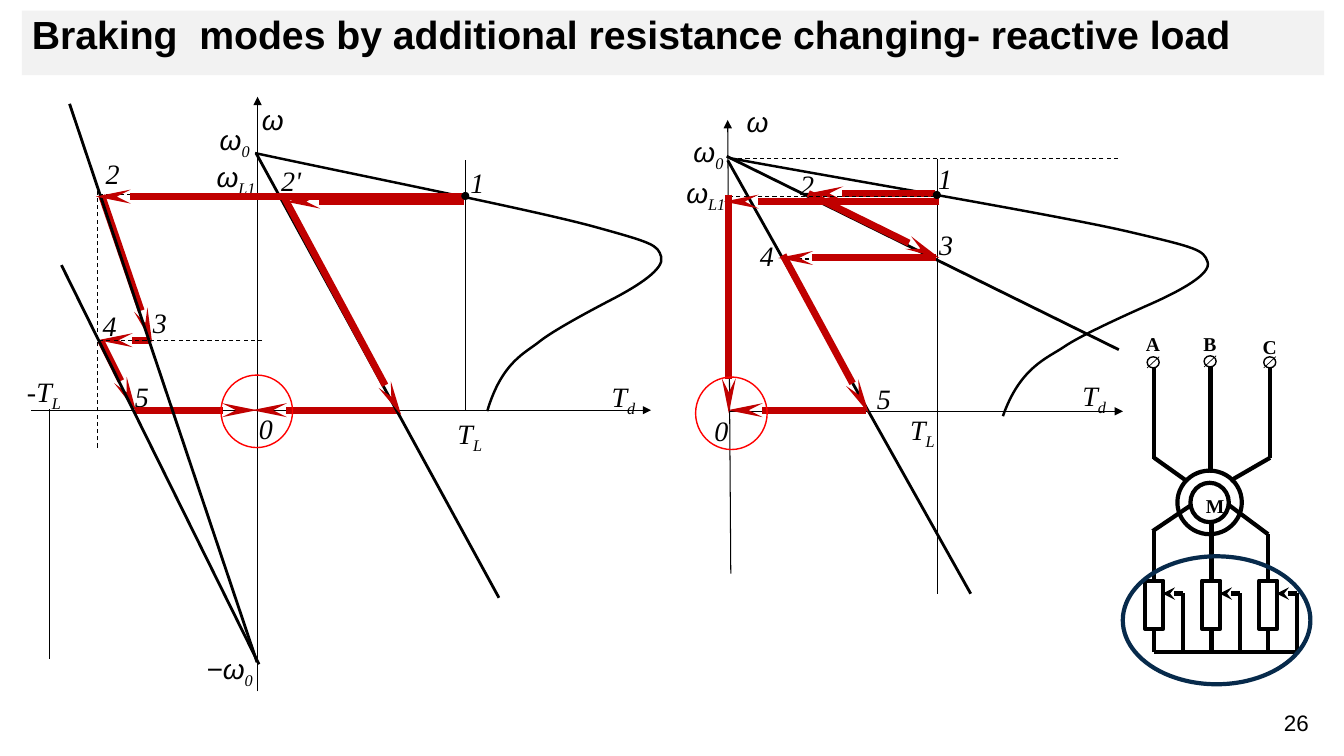
from lxml import etree
from pptx import Presentation
from pptx.dml.color import RGBColor
from pptx.enum.dml import MSO_LINE
from pptx.enum.shapes import MSO_CONNECTOR, MSO_SHAPE
from pptx.enum.text import MSO_ANCHOR, MSO_AUTO_SIZE, PP_ALIGN
from pptx.oxml.ns import qn
from pptx.util import Pt

STRAIGHT = MSO_CONNECTOR.STRAIGHT
RECTANGLE, OVAL = MSO_SHAPE.RECTANGLE, MSO_SHAPE.OVAL
DASH = MSO_LINE.DASH
TOP, NO_FIT = MSO_ANCHOR.TOP, MSO_AUTO_SIZE.NONE
LEFT, CENTER = PP_ALIGN.LEFT, PP_ALIGN.CENTER

BLACK = RGBColor(0x00, 0x00, 0x00)
WHITE = RGBColor(0xFF, 0xFF, 0xFF)
GRAY = RGBColor(0xF2, 0xF2, 0xF2)
DARK_RED = RGBColor(0xC0, 0x00, 0x00)
RED = RGBColor(0xFF, 0x00, 0x00)
NAVY = RGBColor(0x07, 0x2A, 0x4B)
SANS, SERIF = "Arial", "Times New Roman"

TITLE = "Braking  modes by additional resistance changing- reactive load"
PAGE = "26"

STYLES = {
    "axis": (BLACK, 0.75, None, {"type": "triangle"}),
    "load": (BLACK, 0.75, None, None),
    "guide": (BLACK, 0.75, DASH, None),
    "speed": (BLACK, 2, None, None),
    "braking": (DARK_RED, 5, None, {"type": "stealth", "w": "sm", "len": "lg"}),
    "wire": (BLACK, 3, None, None),
    "wiper": (BLACK, 3, None, {"type": "stealth"}),
    "slash": (BLACK, 0.5, None, None),
}

NATURAL_CURVE = [
    (0, 0), (95, 17.3), (235.4, 41), (285.1, 52.6), (334.1, 64.1), (338.4, 65.5),
    (341.3, 74.2), (344.2, 82.8), (321.1, 95), (301.7, 103.7), (282.2, 112.3),
    (250.6, 126.7), (239, 134.6), (227.5, 142.6), (207.4, 149), (195.1, 184.3),
]

REACTIVE_GRAPH = {
    "curve": (521.3, 113, 1),
    "labels": [
        ("T", "d", 766, 262.8, 40), ("4", "", 535.7, 163.4, 40), ("3", "", 663.8, 155.5, 40),
        ("2", "", 564.5, 112.3, 40), ("1", "", 663.1, 108, 28), ("ω", "L1", 483.1, 118, 54),
        ("T", "L", 643, 287.3, 33), ("ω", "", 526.3, 67.7, 54), ("ω", "0", 488.2, 88.6, 54),
        ("0", "", 503.3, 288, 28), ("5", "", 619.2, 265.7, 40),
    ],
    "lines": [
        ("axis", [(522, 409.7, 519.8, 85.7), (520.6, 293.8, 802.1, 293.8)]),
        ("load", [(669.6, 113.8, 669.6, 424.1)]),
        ("guide", [(798.5, 113, 522, 113), (559.4, 185, 666.7, 185)]),
        ("speed", [(519.1, 111.6, 799.2, 249.8)]),
        ("braking", [(618.5, 293, 519.8, 293), (668.9, 184.3, 555.8, 184.3),
                     (577.4, 138.2, 671, 184.3), (668.2, 138.2, 577.4, 138.2)]),
        ("guide", [(668.2, 140.4, 520.6, 140.4)]),
        ("speed", [(519.8, 114.5, 693.4, 424.1)]),
        ("braking", [(520.6, 139, 520.6, 295.2), (559.4, 182.2, 620.6, 295.2),
                     (671, 144, 517, 144)]),
    ],
    "operating_point": (669.2, 139.3),
    "standstill": (522.4, 295.2),
}

REVERSING_GRAPH = {
    "curve": (182.2, 109.4, 0.85),
    "labels": [
        ("T", "d", 429.8, 263.5, 40), ("4", "", 66.2, 213.1, 40), ("3", "", 102.2, 211, 40),
        ("2", "", 68.4, 104.4, 40), ("1", "", 329, 110.9, 28), ("ω", "L1", 147.6, 106.6, 54),
        ("T", "L", 319.7, 290.2, 33), ("ω", "", 180, 66.2, 54), ("ω", "0", 149.8, 79.9, 54),
        ("0", "", 177.8, 286.6, 28), ("5", "", 89.3, 264.2, 40), ("−ω", "0", 140.4, 457.9, 54),
        ("2'", "", 193.7, 109.4, 40), ("-T", "L", 12.2, 259.9, 43),
    ],
    "lines": [
        ("axis", [(184, 493.9, 184, 69.1), (22.3, 293, 465.1, 293)]),
        ("load", [(332.6, 114.5, 332.6, 293), (35.3, 292.3, 35.3, 470.9)]),
        ("braking", [(284.4, 293, 180, 293), (72, 243.4, 97.2, 293.8),
                     (106.6, 243, 69.8, 243), (72.7, 139.7, 108.7, 244.8),
                     (96.5, 293, 183.6, 293)]),
        ("guide", [(331.2, 139, 70.6, 139), (69.8, 319.7, 69.8, 135.4),
                   (187.2, 243, 69.8, 243)]),
        ("speed", [(43.9, 189.4, 185, 474.5), (49.7, 74.2, 183.6, 473),
                   (182.9, 109.4, 356.4, 427)]),
        ("braking", [(203, 141.1, 286.6, 296.6), (331.2, 144, 203.8, 144),
                     (331.2, 140.4, 68.4, 140.4)]),
    ],
    "operating_point": (332.4, 140),
    "standstill": (183.4, 293.8),
}

TERMINALS = [("A", 823.7, 258.8, 233.3), ("B", 864.4, 258.1, 233.3), ("C", 907, 258.8, 235.4)]
WIRES = [
    (824.4, 262, 824.4, 327.6), (824.4, 327, 847.4, 343.4),
    (864.7, 261.4, 864.7, 336.2),
    (907.2, 262, 907.2, 327), (907.2, 327, 878.8, 343.4),
    (851, 360.7, 823.3, 379.4), (824.4, 379.4, 824.4, 466),
    (865.4, 373, 865.4, 466),
    (877.7, 360.7, 905.8, 381.6), (905.8, 381.6, 905.8, 466),
    (927.4, 466, 824.4, 466),
]
RHEOSTATS = [824.4, 865.1, 905.8]

deck = Presentation()
deck.slide_width, deck.slide_height = Pt(960), Pt(540)
slide = deck.slides.add_slide(deck.slide_layouts[5])
shapes = slide.shapes


def add_line(style, x1, y1, x2, y2):
    color, width, dash, arrow = STYLES[style]
    line = shapes.add_connector(STRAIGHT, Pt(x1), Pt(y1), Pt(x2), Pt(y2))
    line.line.color.rgb = color
    line.line.width = Pt(width)
    if dash:
        line.line.dash_style = dash
    if arrow:
        etree.SubElement(line.line._get_or_add_ln(), qn("a:tailEnd"), arrow)
    etree.SubElement(line._element.spPr, qn("a:effectLst"))


def style_outline(shape, color, width, fill=None):
    shape.shadow.inherit = False
    shape.line.color.rgb = color
    shape.line.width = Pt(width)
    if fill is None:
        shape.fill.background()
    else:
        shape.fill.solid()
        shape.fill.fore_color.rgb = fill


def add_centered(kind, x, y, w, h, color, width, fill=None):
    shape = shapes.add_shape(kind, Pt(x - w / 2), Pt(y - h / 2), Pt(w), Pt(h))
    style_outline(shape, color, width, fill)
    return shape


def add_natural_curve(x0, y0, stretch):
    points = [(Pt(x0 + x * stretch), Pt(y0 + y)) for x, y in NATURAL_CURVE]
    builder = shapes.build_freeform(*points[0])
    builder.add_line_segments(points[1:], close=False)
    curve = builder.convert_to_shape()
    segments = list(curve._element.iter(qn("a:lnTo")))
    for i in range(0, len(segments), 3):
        bezier = etree.Element(qn("a:cubicBezTo"))
        segments[i].addprevious(bezier)
        for segment in segments[i:i + 3]:
            bezier.append(segment[0])
            segment.getparent().remove(segment)
    style_outline(curve, BLACK, 1.75)


def format_text(paragraph, size, font, bold=False, italic=False, align=LEFT):
    paragraph.alignment = align
    paragraph.font.size = Pt(size)
    paragraph.font.bold = bold
    paragraph.font.italic = italic
    paragraph.font.color.rgb = BLACK
    if font:
        paragraph.font.name = font


def add_text(text, x, y, w, h, wrap=True):
    frame = shapes.add_textbox(Pt(x), Pt(y), Pt(w), Pt(h)).text_frame
    frame.word_wrap = wrap
    frame.paragraphs[0].text = text
    return frame.paragraphs[0]


def add_symbol(symbol, subscript, x, y, w):
    label = add_text(symbol, x, y, w, 42)
    label.line_spacing = 1.15
    label.space_after = Pt(10)
    mixed = "ω" in symbol
    format_text(label, 20, None if mixed else SERIF, italic=True)
    if subscript:
        index = label.add_run()
        index.text = subscript
        index._r.get_or_add_rPr().set("baseline", "-25000")
    if mixed:
        for run, font in zip(label.runs, (SANS, SERIF)):
            run.font.name = font


def draw_graph(graph):
    add_natural_curve(*graph["curve"])
    for label in graph["labels"]:
        add_symbol(*label)
    for style, lines in graph["lines"]:
        for ends in lines:
            add_line(style, *ends)
    add_centered(OVAL, *graph["operating_point"], 5, 5, BLACK, 0.75, BLACK)
    add_centered(OVAL, *graph["standstill"], 51.1, 51.8, RED, 1)


def draw_motor():
    add_centered(OVAL, 864, 358.9, 46, 45.4, BLACK, 3)
    for ends in WIRES:
        add_line("wire", *ends)
    rotor = add_centered(OVAL, 864, 358.9, 27.4, 28.1, BLACK, 3).text_frame
    rotor.vertical_anchor = TOP
    rotor.paragraphs[0].text = "M"
    format_text(rotor.paragraphs[0], 14, SERIF, bold=True, align=CENTER)
    for x in RHEOSTATS:
        add_centered(RECTANGLE, x, 432, 13, 34.5, BLACK, 3, WHITE)
        add_line("wire", x + 20.7, 466, x + 20.7, 423.5)
        add_line("wiper", x + 20.7, 424, x + 6, 424)
    for phase, x, y, label_top in TERMINALS:
        add_centered(OVAL, x, y, 8.6, 7.9, BLACK, 1, WHITE)
        add_line("slash", x + 4.3, y - 4, x - 4.3, y + 4)
        format_text(add_text(phase, x - 12.3, label_top, 24.5, 24.5, wrap=False),
                    14, SERIF, bold=True, align=CENTER)
    add_centered(OVAL, 869, 443.1, 134, 91.4, NAVY, 3)


title = shapes.title
title.left, title.top, title.width, title.height = Pt(15.6), Pt(7.6), Pt(930.2), Pt(46)
title.fill.solid()
title.fill.fore_color.rgb = GRAY
title.text_frame.text = TITLE
title.text_frame.auto_size = NO_FIT
title.text_frame.vertical_anchor = TOP
title.text_frame.paragraphs[0].line_spacing = 0.9
format_text(title.text_frame.paragraphs[0], 28, SANS, bold=True)

draw_graph(REACTIVE_GRAPH)
draw_motor()
draw_graph(REVERSING_GRAPH)
format_text(add_text(PAGE, 902.9, 503.3, 46, 26.6), 16, SANS, align=CENTER)

deck.save("out.pptx")
